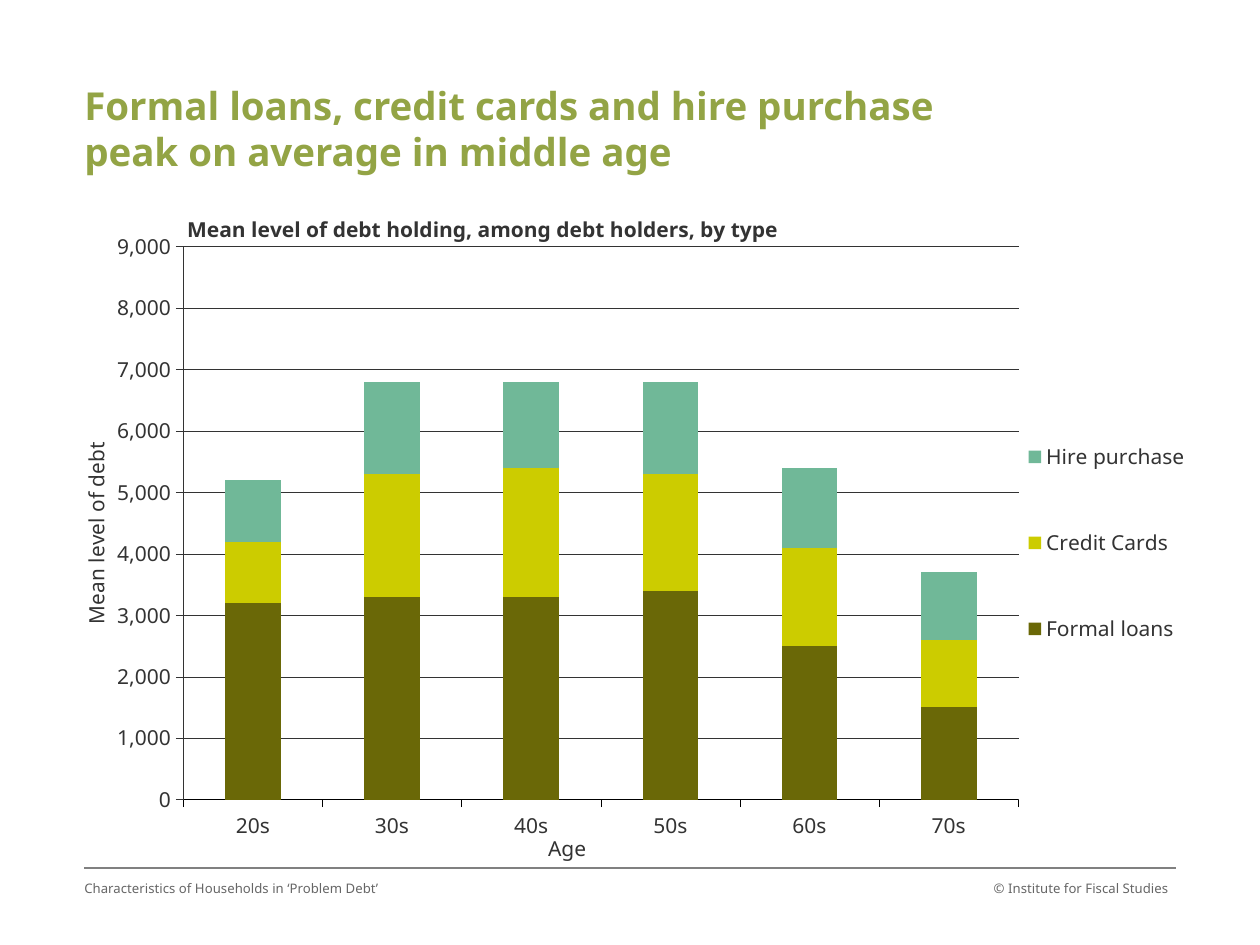
import dataclasses

import lxml.etree
import pptx
import pptx.chart.data
import pptx.dml.color
import pptx.enum.chart
import pptx.enum.dml
import pptx.enum.shapes
import pptx.enum.text
import pptx.oxml
import pptx.oxml.ns
import pptx.util

Cm = pptx.util.Cm
Pt = pptx.util.Pt
qn = pptx.oxml.ns.qn


@dataclasses.dataclass(frozen=True)
class Theme:
    font: str = "Noto Sans"
    heading: str = "93A445"
    footer: str = "666666"
    rule: str = "808080"
    chart: str = "333333"
    baseline: str = "000000"
    series: tuple = ("6A6807", "CCCC00", "70B898")
    heading_size: float = 22
    chart_size: float = 12
    footer_size: float = 7.5


THEME = Theme()
AGES = ("20s", "30s", "40s", "50s", "60s", "70s")
DEBTS = {
    "Formal loans": (3200, 3300, 3300, 3400, 2500, 1500),
    "Credit Cards": (1000, 2000, 2100, 1900, 1600, 1100),
    "Hire purchase": (1000, 1500, 1400, 1500, 1300, 1100),
}


def rgb(value):
    return pptx.dml.color.RGBColor.from_string(value)


def style_font(font, size, color, bold=False):
    font.name = THEME.font
    font.size = Pt(size)
    font.bold = bold
    font.color.rgb = rgb(color)


def style_line(line, color, width):
    line.color.rgb = rgb(color)
    line.width = Pt(width)


def add_text(page, text, left, top, width, height, size, color, bold=False):
    box = page.shapes.add_textbox(Cm(left), Cm(top), Cm(width), Cm(height))
    frame = box.text_frame
    frame.word_wrap = True
    frame.margin_left = frame.margin_right = 0
    frame.margin_top = frame.margin_bottom = 0
    span = frame.paragraphs[0].add_run()
    span.text = text
    style_font(span.font, size, color, bold)
    return box


def add_rule(page, left, right, top):
    rule = page.shapes.add_connector(
        pptx.enum.shapes.MSO_CONNECTOR.STRAIGHT,
        Cm(left), Cm(top), Cm(right), Cm(top))
    style_line(rule.line, THEME.rule, 0.75)
    lxml.etree.SubElement(rule._element.spPr, qn("a:effectLst"))


def set_layout(element, x, y, width=None, height=None, inner=False):
    """Place a chart part by percentages of the chart area."""
    for old in element.findall(qn("c:layout")):
        element.remove(old)
    layout = pptx.oxml.parse_xml(f'<c:layout {pptx.oxml.ns.nsdecls("c")}/>')
    manual = lxml.etree.SubElement(layout, qn("c:manualLayout"))
    settings = [("layoutTarget", "inner")] if inner else []
    settings += [("xMode", "edge"), ("yMode", "edge"),
                 ("x", x / 100), ("y", y / 100)]
    if width is not None:
        settings += [("w", width / 100), ("h", height / 100)]
    for name, value in settings:
        lxml.etree.SubElement(manual, qn(f"c:{name}")).set("val", str(value))
    # The layout follows the text of a title or the position of a legend
    before = [child for child in element
              if child.tag in (qn("c:tx"), qn("c:legendPos"))]
    element.insert(len(before), layout)


def set_title(title, text, x, y, bold=False):
    span = title.text_frame.paragraphs[0].add_run()
    span.text = text
    style_font(span.font, THEME.chart_size, THEME.chart, bold)
    set_layout(title._element, x, y)


def style_axis(axis, color):
    axis.major_tick_mark = pptx.enum.chart.XL_TICK_MARK.OUTSIDE
    axis.minor_tick_mark = pptx.enum.chart.XL_TICK_MARK.NONE
    style_line(axis.format.line, color, 0.25)
    style_font(axis.tick_labels.font, THEME.chart_size, THEME.chart)


def add_debt_chart(page):
    data = pptx.chart.data.CategoryChartData(number_format="#,##0")
    data.categories = AGES
    for name, values in DEBTS.items():
        data.add_series(name, values)
    chart = page.shapes.add_chart(
        pptx.enum.chart.XL_CHART_TYPE.COLUMN_STACKED,
        Cm(1.3), Cm(4.11), Cm(22.81), Cm(13.41), data).chart
    style_font(chart.font, THEME.chart_size, THEME.chart)

    # Columns
    plot = chart.plots[0]
    plot.overlap = 100
    plot.gap_width = 150
    plot.vary_by_categories = False
    for series, color in zip(plot.series, THEME.series):
        series.format.fill.solid()
        series.format.fill.fore_color.rgb = rgb(color)
    set_layout(chart._chartSpace.chart.plotArea, 10.5, 6.5, 73.8, 84.2,
               inner=True)

    # Axes and grid
    ages, amounts = chart.category_axis, chart.value_axis
    style_axis(ages, THEME.baseline)
    style_axis(amounts, THEME.chart)
    amounts.minimum_scale, amounts.maximum_scale = 0, 9000
    amounts.major_unit = 1000
    amounts.tick_labels.number_format = "#,##0"
    amounts.tick_labels.number_format_is_linked = False
    grid = amounts.major_gridlines.format.line
    style_line(grid, THEME.chart, 0.25)
    grid.dash_style = pptx.enum.dml.MSO_LINE.ROUND_DOT

    # Titles
    set_title(chart.chart_title,
              "Mean level of debt holding, among debt holders, by type",
              10.5, 0.8, bold=True)
    chart.chart_title.include_in_layout = True
    set_title(ages.axis_title, "Age", 42.4, 95)
    set_title(amounts.axis_title, "Mean level of debt", 1, 36)
    body = amounts.axis_title.text_frame._txBody.bodyPr
    body.set("rot", "-5400000")
    body.set("vert", "horz")

    # Legend
    chart.has_legend = True
    legend = chart.legend
    legend.position = pptx.enum.chart.XL_LEGEND_POSITION.RIGHT
    legend.include_in_layout = True
    style_font(legend.font, THEME.chart_size, THEME.chart)
    set_layout(legend._element, 84.6, 27.6, 15, 48)


def main():
    deck = pptx.Presentation()
    deck.slide_width, deck.slide_height = Cm(25.4), Cm(19.05)
    page = deck.slides.add_slide(deck.slide_layouts[6])

    # Heading
    add_text(
        page,
        "Formal loans, credit cards and hire purchase peak on average in middle age",
        1.7, 1.65, 18.2, 1.12, THEME.heading_size, THEME.heading, bold=True)

    # Footer
    add_rule(page, 1.7, 23.7, 17.5)
    add_text(page, "Characteristics of Households in ‘Problem Debt’",
             1.7, 17.75, 8.05, 1.02, THEME.footer_size, THEME.footer)
    owner = add_text(page, "© Institute for Fiscal Studies",
                     19.3, 17.75, 4.4, 1.02, THEME.footer_size, THEME.footer)
    owner.text_frame.margin_right = Cm(0.15)
    owner.text_frame.paragraphs[0].alignment = pptx.enum.text.PP_ALIGN.RIGHT

    add_debt_chart(page)
    deck.save("out.pptx")


if __name__ == "__main__":
    main()
